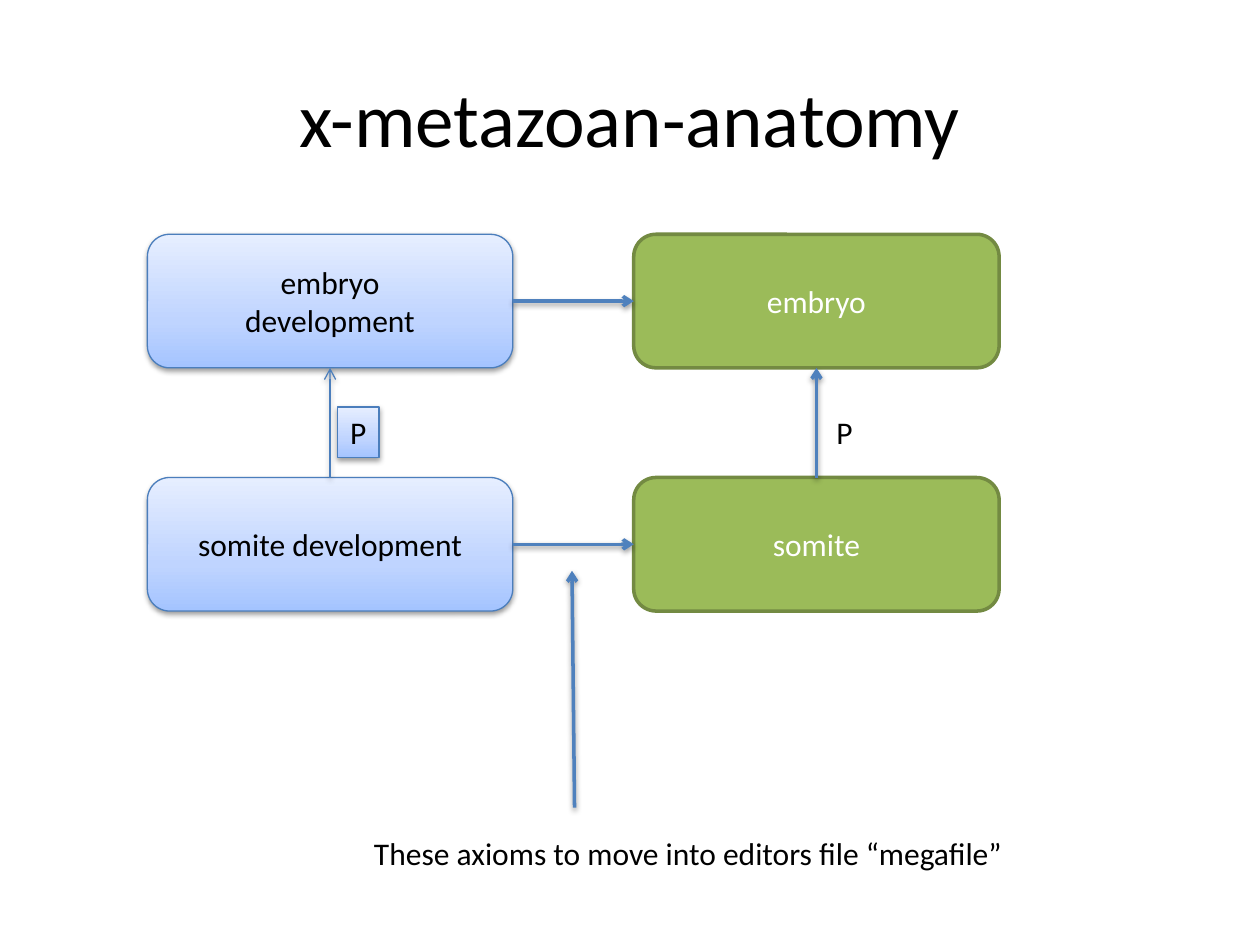
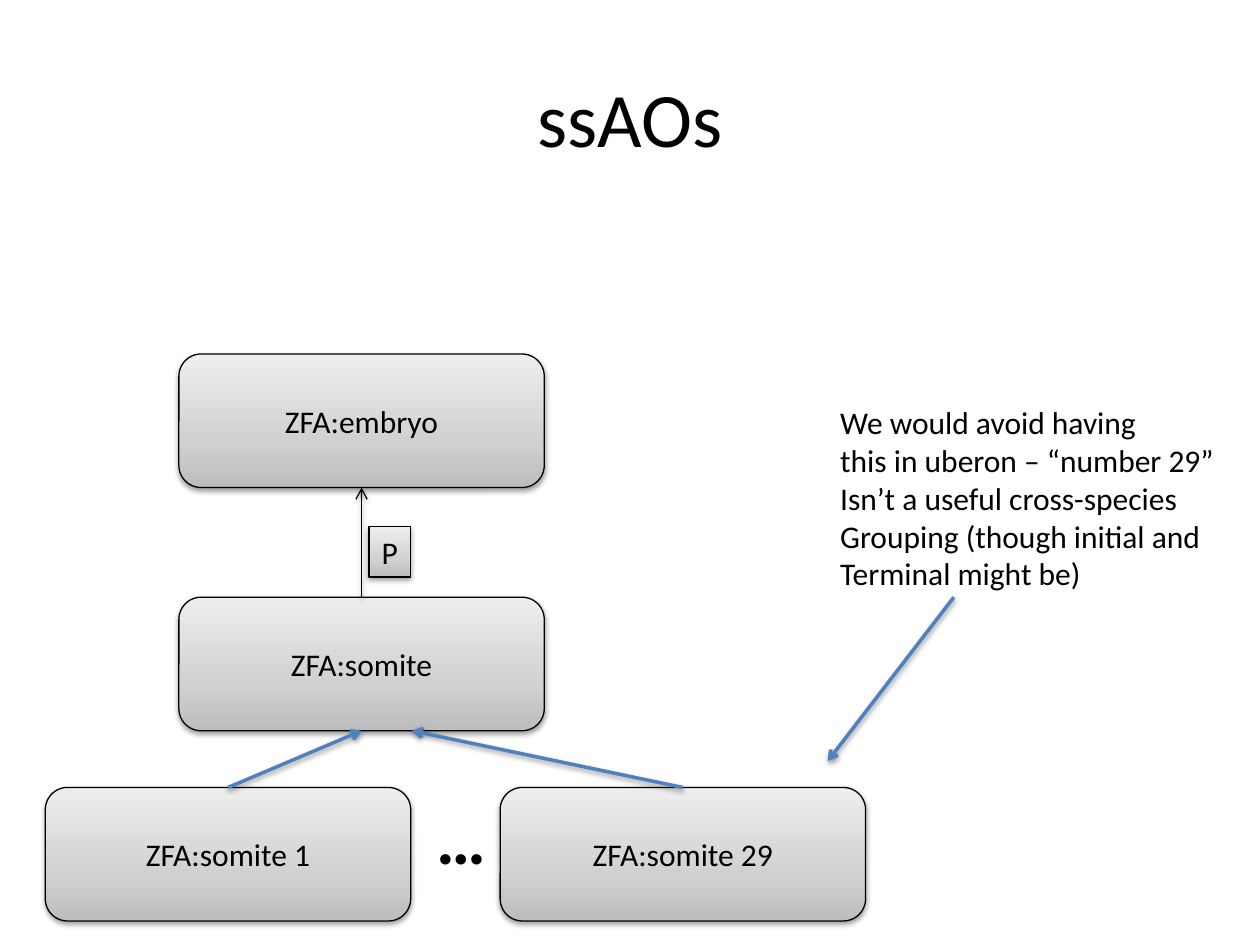
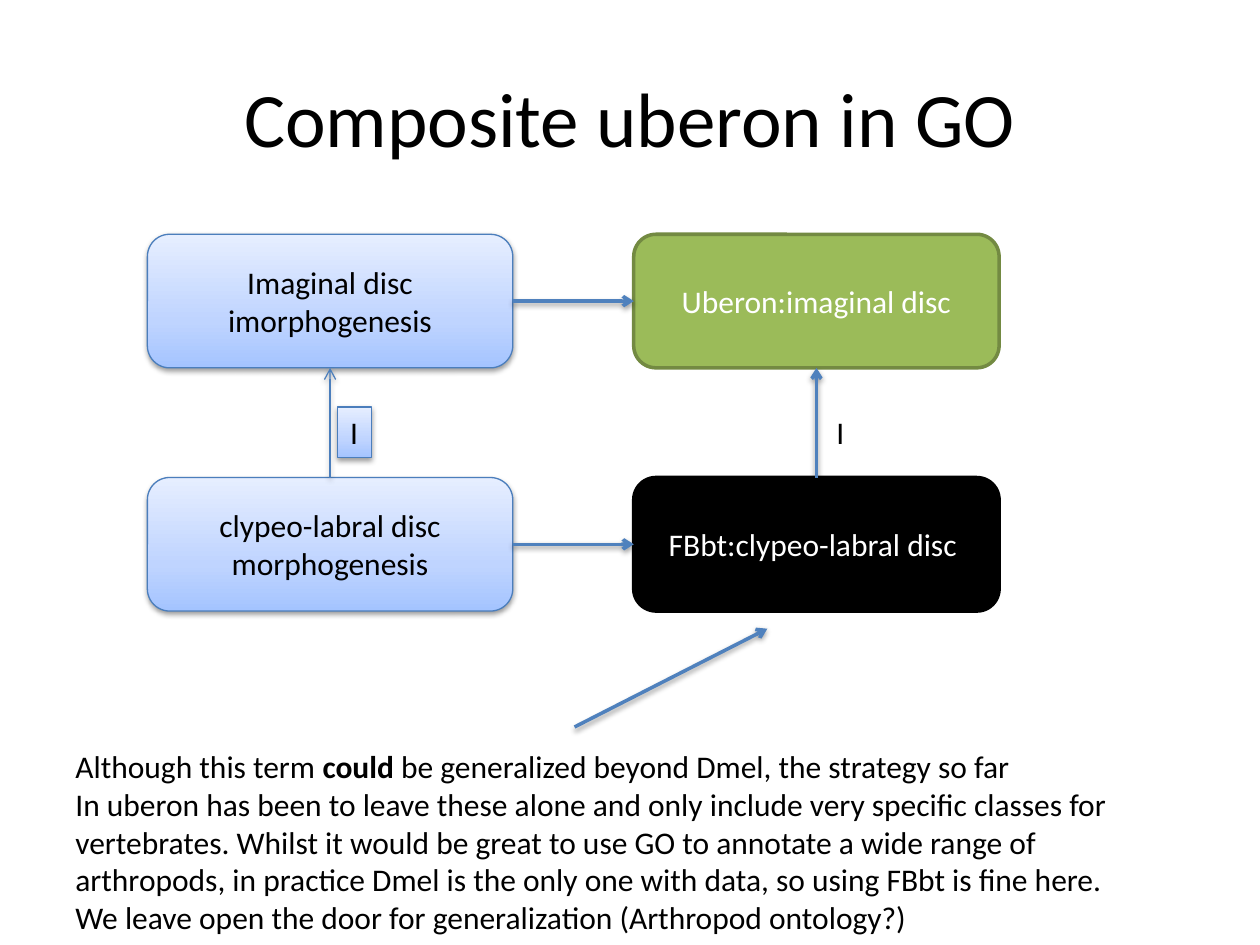
import copy
from dataclasses import dataclass

import lxml.etree
import pptx
import pptx.dml.color
import pptx.enum.shapes
import pptx.enum.text
import pptx.oxml.ns
import pptx.presentation
import pptx.shapes.autoshape
import pptx.slide
import pptx.text.text
import pptx.util
from pptx.util import Inches

FONT = "Calibri"
BLACK, WHITE, BLUE = "000000", "FFFFFF", "4F81BD"
NODE_WIDTH, NODE_HEIGHT = 2.9, 1.06
ROW_PITCH = 1.93
COLUMN_PITCH = 3.86
PROCESS_LEFT, PROCESS_TOP = 1.17, 1.86
SHAPES = pptx.enum.shapes.MSO_SHAPE


@dataclass(frozen=True)
class Style:
    fill: tuple[str, ...]
    line: str
    width: float
    text: str
    shadow: bool


@dataclass(frozen=True)
class Arrow:
    start: tuple[float, float]
    end: tuple[float, float]
    color: str = BLUE
    width: float = 2


@dataclass(frozen=True)
class Pair:
    upper: str
    lower: str
    upper_style: Style
    lower_style: Style


PROCESS = Style(("A4C4FF", "BFD4FF", "E6EEFF"), "4B7EBC", 0.75, BLACK, True)
SPECIES = Style(("BDBDBD", "D1D1D1", "EEEEEE"), BLACK, 0.75, BLACK, True)
ANATOMY = Style(("9BBB59",), "738A42", 2, WHITE, False)
FLY = Style((BLACK,), BLACK, 2, WHITE, False)
STOP_POSITIONS = (0, 0.35, 1)


def rgb(color: str) -> pptx.dml.color.RGBColor:
    return pptx.dml.color.RGBColor.from_string(color)


def add_xml(parent, tag: str, **attributes: object):
    child = lxml.etree.SubElement(parent, pptx.oxml.ns.qn(tag))
    for name, value in attributes.items():
        child.set(name, str(value))
    return child


def add_shadow(effects) -> None:
    shadow = add_xml(effects, "a:outerShdw", blurRad=40000, dist=20000,
                     dir=5400000, rotWithShape=0)
    add_xml(add_xml(shadow, "a:srgbClr", val=BLACK), "a:alpha", val=38000)


def format_runs(frame: pptx.text.text.TextFrame, color: str = BLACK, size: float = 18) -> None:
    for para in frame.paragraphs:
        for span in para.runs:
            span.font.name = FONT
            span.font.size = pptx.util.Pt(size)
            span.font.color.rgb = rgb(color)


def fit_text(frame: pptx.text.text.TextFrame, wrap: bool) -> None:
    frame.word_wrap = wrap
    frame.auto_size = pptx.enum.text.MSO_AUTO_SIZE.SHAPE_TO_FIT_TEXT


def fill_shape(shape: pptx.shapes.autoshape.Shape, colors: tuple[str, ...]) -> None:
    if len(colors) == 1:
        shape.fill.solid()
        shape.fill.fore_color.rgb = rgb(colors[0])
        return
    shape.fill.gradient()
    shape.fill.gradient_angle = 90
    stop_list = shape._element.spPr.find(".//" + pptx.oxml.ns.qn("a:gsLst"))
    stop_list.append(copy.deepcopy(stop_list[0]))
    for stop, position, color in zip(shape.fill.gradient_stops, STOP_POSITIONS, colors):
        stop.position = position
        stop.color.rgb = rgb(color)


def add_box(page: pptx.slide.Slide, kind: SHAPES, left: float, top: float, width: float,
            height: float, text: str, style: Style) -> pptx.shapes.autoshape.Shape:
    box = page.shapes.add_shape(kind, Inches(left), Inches(top), Inches(width), Inches(height))
    fill_shape(box, style.fill)
    box.line.color.rgb = rgb(style.line)
    box.line.width = pptx.util.Pt(style.width)
    box.shadow.inherit = False
    if style.shadow:
        add_shadow(box._element.spPr.find(pptx.oxml.ns.qn("a:effectLst")))
    box.text_frame.text = text
    format_runs(box.text_frame, style.text)
    return box


def add_node(page: pptx.slide.Slide, left: float, top: float, text: str, style: Style) -> None:
    node = add_box(page, SHAPES.ROUNDED_RECTANGLE, left, top, NODE_WIDTH, NODE_HEIGHT, text, style)
    node.text_frame.word_wrap = True
    node.text_frame.vertical_anchor = pptx.enum.text.MSO_ANCHOR.MIDDLE
    for para in node.text_frame.paragraphs:
        para.alignment = pptx.enum.text.PP_ALIGN.CENTER


def add_arrow(page: pptx.slide.Slide, arrow: Arrow) -> None:
    start, end = (map(Inches, point) for point in (arrow.start, arrow.end))
    connector = page.shapes.add_connector(pptx.enum.shapes.MSO_CONNECTOR.STRAIGHT, *start, *end)
    connector.line.color.rgb = rgb(arrow.color)
    connector.line.width = pptx.util.Pt(arrow.width)
    add_xml(connector.line._get_or_add_ln(), "a:tailEnd", type="arrow")
    add_shadow(add_xml(connector._element.spPr, "a:effectLst"))


def add_text(page: pptx.slide.Slide, left: float, top: float, width: float, height: float,
             text: str, wrap: bool = False, size: float = 18) -> pptx.text.text.TextFrame:
    box = page.shapes.add_textbox(Inches(left), Inches(top), Inches(width), Inches(height))
    frame = box.text_frame
    fit_text(frame, wrap)
    frame.text = text
    format_runs(frame, size=size)
    return frame


def add_pair(page: pptx.slide.Slide, left: float, top: float, pair: Pair,
             relation: str, relation_width: float) -> None:
    add_node(page, left, top + ROW_PITCH, pair.lower, pair.lower_style)
    add_node(page, left, top, pair.upper, pair.upper_style)
    style = pair.upper_style
    middle = left + NODE_WIDTH / 2
    ends = (middle, top + ROW_PITCH), (middle, top + NODE_HEIGHT)
    label_area = (middle + 0.06, top + 1.37, relation_width, 0.4)
    if style.shadow:
        add_arrow(page, Arrow(*ends, style.line, style.width))
        label = add_box(page, SHAPES.RECTANGLE, *label_area, relation, style)
        fit_text(label.text_frame, False)
        label.text_frame.vertical_anchor = pptx.enum.text.MSO_ANCHOR.TOP
        label.text_frame.paragraphs[0].alignment = pptx.enum.text.PP_ALIGN.LEFT
    else:
        add_arrow(page, Arrow(*ends))
        add_text(page, *label_area, relation)


def add_mapping(page: pptx.slide.Slide, process: Pair, anatomy: Pair,
                relation: str, relation_width: float) -> None:
    anatomy_left = PROCESS_LEFT + COLUMN_PITCH
    add_pair(page, anatomy_left, PROCESS_TOP, anatomy, relation, relation_width)
    add_pair(page, PROCESS_LEFT, PROCESS_TOP, process, relation, relation_width)
    for row in range(2):
        middle = PROCESS_TOP + row * ROW_PITCH + NODE_HEIGHT / 2
        add_arrow(page, Arrow((PROCESS_LEFT + NODE_WIDTH, middle), (anatomy_left, middle)))


def add_page(deck: pptx.presentation.Presentation, heading: str) -> pptx.slide.Slide:
    page = deck.slides.add_slide(deck.slide_layouts[5])
    title = page.shapes.title
    title.left, title.top, title.width, title.height = map(Inches, (0.5, 0.3, 9, 1.25))
    title.text_frame.text = heading
    title.text_frame.vertical_anchor = pptx.enum.text.MSO_ANCHOR.MIDDLE
    title.text_frame.paragraphs[0].alignment = pptx.enum.text.PP_ALIGN.CENTER
    format_runs(title.text_frame, size=44)
    return page


def build_metazoan(deck: pptx.presentation.Presentation) -> None:
    page = add_page(deck, "x-metazoan-anatomy")
    add_mapping(page,
                Pair("embryo\ndevelopment", "somite development", PROCESS, PROCESS),
                Pair("embryo", "somite", ANATOMY, ANATOMY), "P", 0.33)
    add_arrow(page, Arrow((4.56, 6.41), (4.54, 4.53)))
    add_text(page, 2.87, 6.57, 5.26, 0.4, "These axioms to move into editors file “megafile”")


def build_species(deck: pptx.presentation.Presentation) -> None:
    page = add_page(deck, "ssAOs")
    add_pair(page, 1.42, 2.81, Pair("ZFA:embryo", "ZFA:somite", SPECIES, SPECIES), "P", 0.33)
    for left, target, text in ((0.36, 2.87, "ZFA:somite 1"), (3.97, 3.27, "ZFA:somite 29")):
        add_node(page, left, 6.25, text, SPECIES)
        add_arrow(page, Arrow((left + NODE_WIDTH / 2, 6.25), (target, 5.8)))
    dots = add_text(page, 3.37, 6.26, 0.6, 0.77, "…", size=40)
    dots.paragraphs[0].runs[0].font.bold = True
    add_arrow(page, Arrow((7.57, 4.74), (6.57, 6.04)))
    add_text(page, 6.57, 3.15, 3.2, 1.62,
             "We would avoid having\n"
             "this in uberon – “number 29”\n"
             "Isn’t a useful cross-species\n"
             "Grouping (though initial and\n"
             "Terminal might be)")


def build_composite(deck: pptx.presentation.Presentation) -> None:
    page = add_page(deck, "Composite uberon in GO")
    add_mapping(page,
                Pair("Imaginal disc imorphogenesis", "clypeo-labral disc morphogenesis",
                     PROCESS, PROCESS),
                Pair("Uberon:imaginal disc", "FBbt:clypeo-labral disc ", ANATOMY, FLY), "I", 0.27)
    add_arrow(page, Arrow((4.56, 5.77), (6.09, 4.99)))
    note = add_text(page, 0.5, 5.88, 8.89, 1.62,
                    "Although this term \n"
                    "In uberon has been to leave these alone and only include very specific "
                    "classes for\n"
                    "vertebrates. Whilst it would be great to use GO to annotate a wide range of "
                    "arthropods, in practice Dmel is the only one with data, so using FBbt is "
                    "fine here.\n"
                    "We leave open the door for generalization (Arthropod ontology?)", wrap=True)
    for text, bold in (("could ", True), ("be generalized beyond Dmel, the strategy so far", False)):
        span = note.paragraphs[0].add_run()
        span.text = text
        span.font.bold = bold
    format_runs(note)


def main() -> None:
    deck = pptx.Presentation()
    deck.slide_width, deck.slide_height = Inches(10), Inches(7.5)
    build_metazoan(deck)
    build_species(deck)
    build_composite(deck)
    deck.save("out.pptx")


if __name__ == "__main__":
    main()
